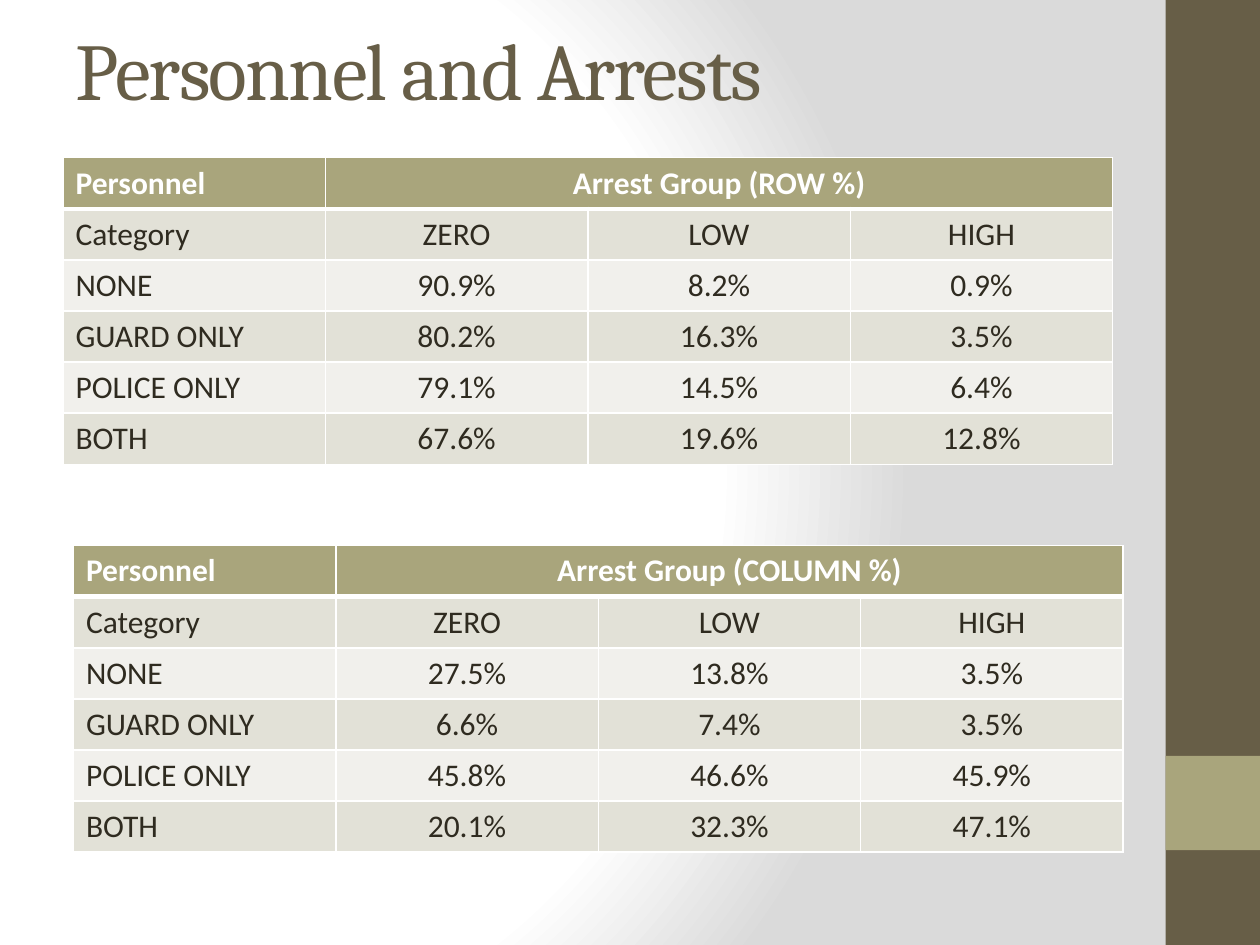
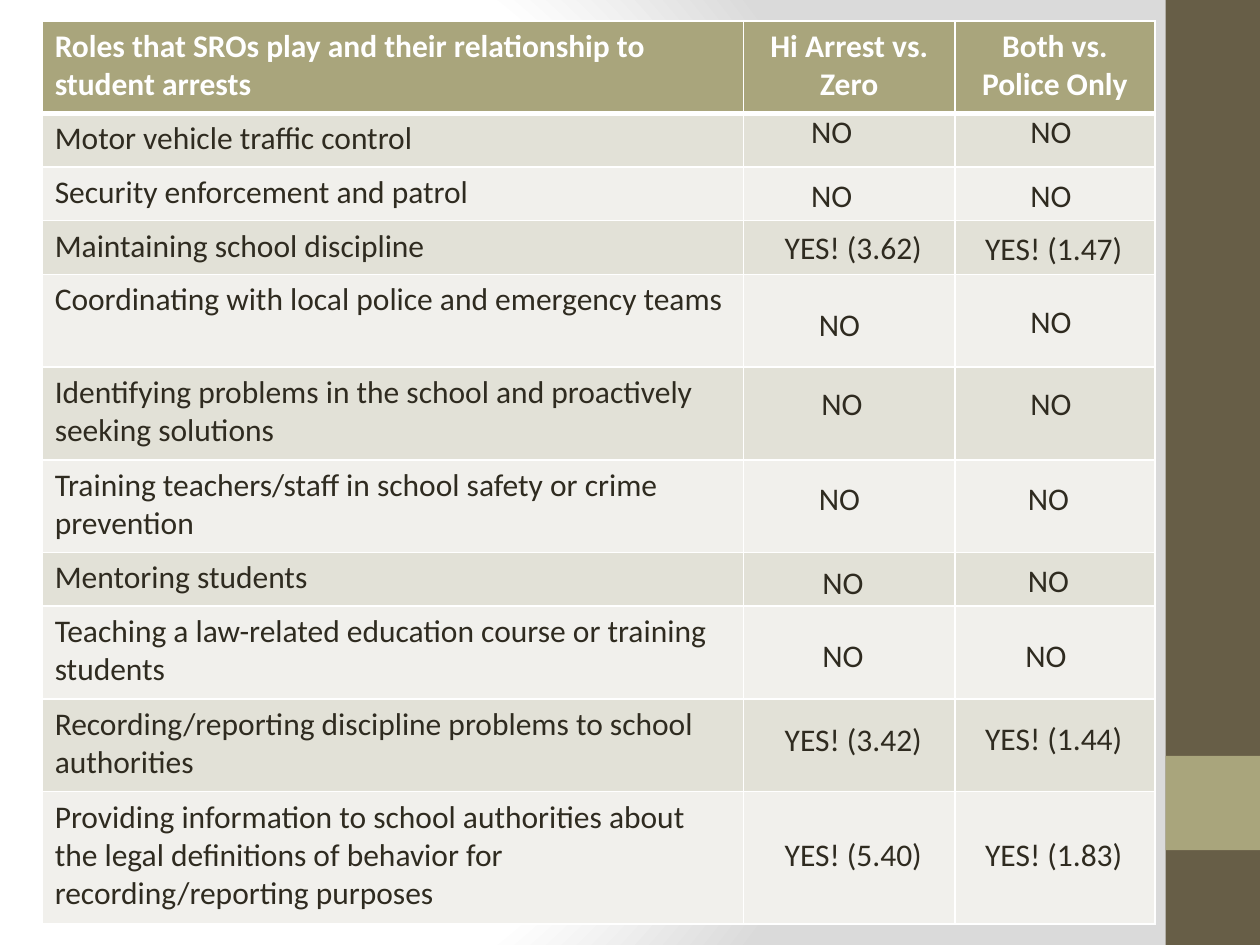
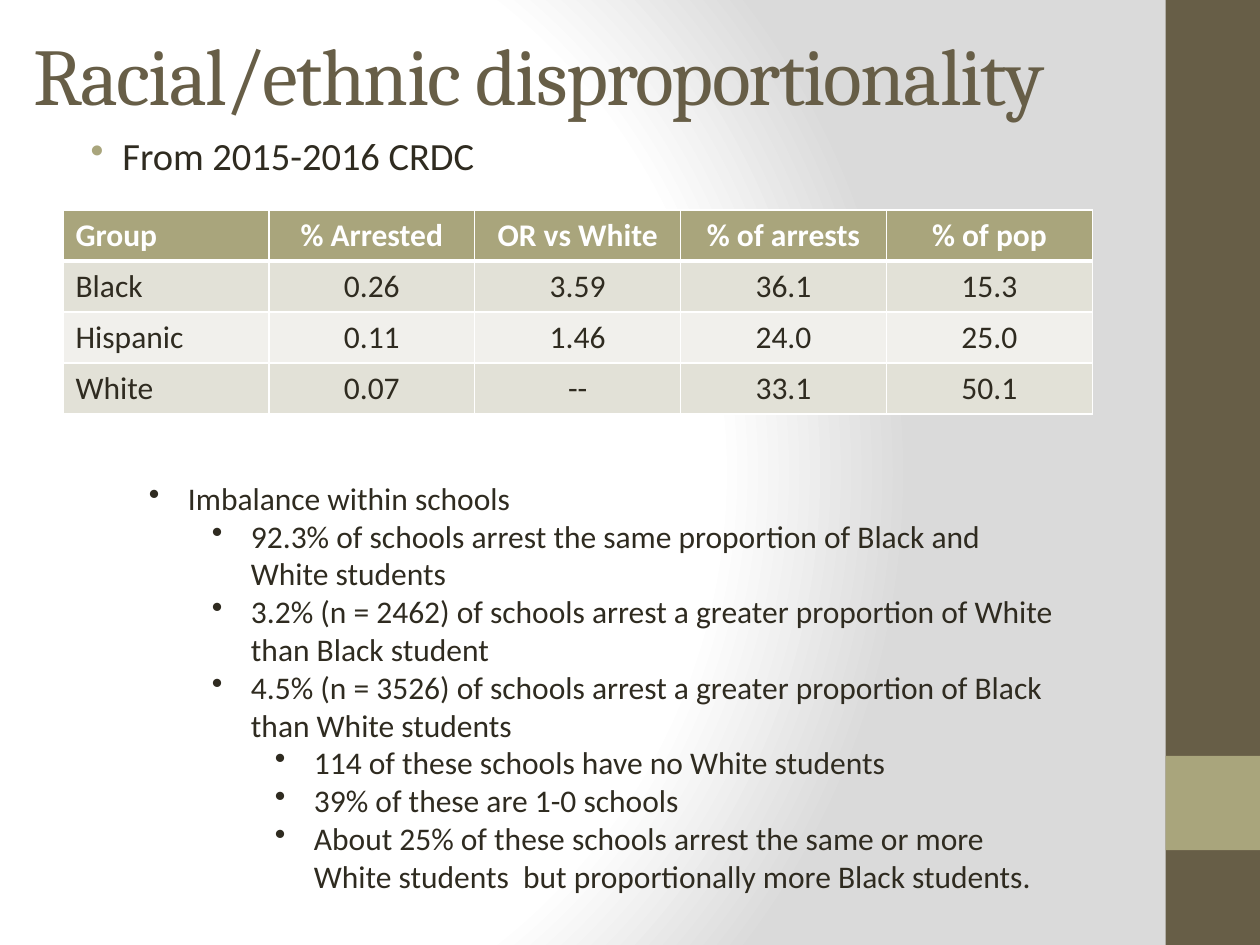
"""Build three slides on school personnel, student arrests and disproportionality."""
from itertools import zip_longest

from pptx import Presentation
from pptx.dml.color import RGBColor
from pptx.enum.shapes import MSO_SHAPE as Shape
from pptx.enum.text import MSO_ANCHOR as Anchor, MSO_AUTO_SIZE as AutoSize, PP_ALIGN as Align
from pptx.oxml import parse_xml
from pptx.oxml.ns import nsdecls, qn
from pptx.util import Cm, Pt

COLORS = {
    "brown": "675E47",
    "olive": "A9A57C",
    "ink": "2F2B20",
    "white": "FFFFFF",
    "gray": "DADADA",
    "band_dark": "E2E1D7",
    "band_light": "F1F0EC",
}
RGB = {name: RGBColor.from_string(value) for name, value in COLORS.items()}


def add_text(page, left, top, width, height, lines, size=18, bullet=None, space=0):
    """Add a text box from (level, text) lines, bulleted in the given colour."""
    box = page.shapes.add_textbox(Cm(left), Cm(top), Cm(width), Cm(height))
    frame = box.text_frame
    frame.word_wrap = True
    for number, (level, text) in enumerate(lines):
        para = frame.add_paragraph() if number else frame.paragraphs[0]
        para.text = text
        para.level = level
        if bullet:
            margin, hanging = (0.79 + 1.27 * level, 0.79) if level else (0.95, 0.64)
            properties = para._p.get_or_add_pPr()
            properties.set("marL", str(Cm(margin)))
            properties.set("indent", str(-Cm(hanging)))
            properties.append(parse_xml(
                f'<a:buClr {nsdecls("a")}><a:srgbClr val="{COLORS[bullet]}"/></a:buClr>'))
            properties.append(parse_xml(f'<a:buChar {nsdecls("a")} char="•"/>'))
            para.space_before = Pt(space)
        para.font.name, para.font.size = "Calibri", Pt(size)
        para.font.color.rgb = RGB["ink"]


def add_grid(page, left, top, widths, heights, rows):
    """Add a banded table; a short header row stretches its last cell."""
    table = page.shapes.add_table(len(rows), len(widths), Cm(left), Cm(top),
                                  Cm(sum(widths)), Cm(sum(heights))).table
    for column, width in zip(table.columns, widths):
        column.width = Cm(width)
    for row_index, (row, height, texts) in enumerate(zip(table.rows, heights, rows)):
        row.height = Cm(height)
        header = row_index == 0
        fill = "olive" if header else ("band_light", "band_dark")[row_index % 2]
        thick = {0: "lnB", 1: "lnT"}.get(row_index)
        for column_index, (cell, text) in enumerate(zip_longest(row.cells, texts, fillvalue="")):
            for side in ("lnL", "lnR", "lnT", "lnB"):
                cell._tc.get_or_add_tcPr().append(parse_xml(
                    f'<a:{side} {nsdecls("a")} w="{Pt(3 if side == thick else 1)}"><a:solidFill>'
                    f'<a:srgbClr val="{COLORS["white"]}"/></a:solidFill></a:{side}>'))
            cell.fill.solid()
            cell.fill.fore_color.rgb = RGB[fill]
            cell.text = text
            para = cell.text_frame.paragraphs[0]
            para.alignment = Align.CENTER if column_index else Align.LEFT
            para.font.name, para.font.size, para.font.bold = "Calibri", Pt(18), header
            para.font.color.rgb = RGB["white" if header else "ink"]
    if len(rows[0]) < len(widths):
        table.cell(0, len(rows[0]) - 1).merge(table.cell(0, len(widths) - 1))


deck = Presentation()
deck.slide_width, deck.slide_height = Cm(25.4), Cm(19.05)
title_only, blank = deck.slide_layouts[5], deck.slide_layouts[6]
arrests_page, roles_page, race_page = [
    deck.slides.add_slide(layout) for layout in (title_only, blank, title_only)]

master = deck.slide_master
master.background.fill.solid()
backdrop = master.element.find(".//" + qn("p:bgPr"))
stops = "".join(f'<a:gs pos="{place}"><a:srgbClr val="{COLORS[name]}"/></a:gs>'
                for place, name in ((0, "white"), (75000, "white"), (100000, "gray")))
backdrop.replace(backdrop.find(qn("a:solidFill")), parse_xml(
    f'<a:gradFill {nsdecls("a")} rotWithShape="1"><a:gsLst>{stops}</a:gsLst><a:path path="circle">'
    '<a:fillToRect l="20000" t="50000" r="100000" b="50000"/></a:path></a:gradFill>'))
for top, height, color in ((0, 19.05, "brown"), (15.24, 1.9, "olive")):
    band = arrests_page.shapes.add_shape(Shape.RECTANGLE, Cm(23.5), Cm(top), Cm(1.9), Cm(height))
    band.shadow.inherit = False
    band.fill.solid()
    band.fill.fore_color.rgb = RGB[color]
    band.line.fill.background()
    master.shapes.element.append(band.element)

for page, text, left, top, width, height in (
        (arrests_page, "Personnel and Arrests", 1.27, 0.42, 21.17, 1.9),
        (race_page, "Racial/ethnic disproportionality", 0.42, 0, 22.65, 2.96)):
    title = page.shapes.title
    title.left, title.top, title.width, title.height = Cm(left), Cm(top), Cm(width), Cm(height)
    frame = title.text_frame
    frame.text = text
    frame.auto_size = AutoSize.NONE
    frame.vertical_anchor = Anchor.MIDDLE
    para = frame.paragraphs[0]
    para.alignment = Align.LEFT
    para.font.name, para.font.size = "Cambria", Pt(46)
    para.font.color.rgb = RGB["brown"]
    para.runs[0]._r.get_or_add_rPr().set("spc", "-100")

levels = ["Category", "ZERO", "LOW", "HIGH"]
row_shares = [
    ["Personnel", "Arrest Group (ROW %)"],
    levels,
    ["NONE", "90.9%", "8.2%", "0.9%"],
    ["GUARD ONLY", "80.2%", "16.3%", "3.5%"],
    ["POLICE ONLY", "79.1%", "14.5%", "6.4%"],
    ["BOTH", "67.6%", "19.6%", "12.8%"],
]
column_shares = [
    ["Personnel", "Arrest Group (COLUMN %)"],
    levels,
    ["NONE", "27.5%", "13.8%", "3.5%"],
    ["GUARD ONLY", "6.6%", "7.4%", "3.5%"],
    ["POLICE ONLY", "45.8%", "46.6%", "45.9%"],
    ["BOTH", "20.1%", "32.3%", "47.1%"],
]
for left, top, shares in ((1.27, 3.18, row_shares), (1.48, 11, column_shares)):
    add_grid(arrests_page, left, top, [5.29] * 4, [1.03] * 6, shares)

one_line, two_lines, three_lines = 1.08, 1.87, 2.67
roles = [
    ("Motor vehicle traffic control", one_line,
     ("NO", 16.1, 2.13), ("NO", 20.52, 2.13)),
    ("Security enforcement and patrol", one_line,
     ("NO", 16.1, 3.43), ("NO", 20.52, 3.43)),
    ("Maintaining school discipline", one_line,
     ("YES! (3.62)", 15.57, 4.47), ("YES! (1.47)", 19.61, 4.5)),
    ("Coordinating with local police and emergency teams", two_lines,
     ("NO", 16.26, 6.02), ("NO", 20.52, 5.97)),
    ("Identifying problems in the school and proactively seeking solutions", two_lines,
     ("NO", 16.31, 7.62), ("NO", 20.52, 7.62)),
    ("Training teachers/staff in school safety or crime prevention", two_lines,
     ("NO", 16.26, 9.53), ("NO", 20.47, 9.53)),
    ("Mentoring students", one_line,
     ("NO", 16.33, 11.23), ("NO", 20.47, 11.18)),
    ("Teaching a law-related education course or training students", two_lines,
     ("NO", 16.33, 12.7), ("NO", 20.42, 12.7)),
    ("Recording/reporting discipline problems to school authorities", two_lines,
     ("YES! (3.42)", 15.57, 14.4), ("YES! (1.44)", 19.61, 14.38)),
    ("Providing information to school authorities about the legal definitions of behavior "
     "for recording/reporting purposes", three_lines,
     ("YES! (5.40)", 15.57, 16.71), ("YES! (1.83)", 19.61, 16.71)),
]
role_header = ["Roles that SROs play and their relationship to student arrests",
               "Hi Arrest vs. Zero", "Both vs. Police Only"]
add_grid(roles_page, 0.85, 0.42, [14.14, 4.26, 4.03],
         [two_lines] + [height for _, height, *_ in roles],
         [role_header] + [[role] for role, *_ in roles])
for _, _, *answers in roles:
    for answer, left, top in answers:
        add_text(roles_page, left, top, 1.48 if answer == "NO" else 4.01, 1.03, [(0, answer)])

add_text(race_page, 1.27, 2.54, 21.17, 15.24, [(0, "From 2015-2016 CRDC")],
         size=22, bullet="olive", space=4.4)
add_grid(race_page, 1.27, 4.23, [4.15] * 5, [1.03] * 4, [
    ["Group", "% Arrested", "OR vs White", "% of arrests", "% of pop"],
    ["Black", "0.26", "3.59", "36.1", "15.3"],
    ["Hispanic", "0.11", "1.46", "24.0", "25.0"],
    ["White", "0.07", "--", "33.1", "50.1"],
])
add_text(race_page, 1.48, 9.53, 20.11, 9.5, [
    (1, "Imbalance within schools"),
    (2, "92.3% of schools arrest the same proportion of Black and White students"),
    (2, "3.2% (n = 2462) of schools arrest a greater proportion of White than Black student"),
    (2, "4.5% (n = 3526) of schools arrest a greater proportion of Black than White students"),
    (3, "114 of these schools have no White students"),
    (3, "39% of these are 1-0 schools"),
    (3, "About 25% of these schools arrest the same or more White students  "
        "but proportionally more Black students."),
], bullet="ink")

deck.save("out.pptx")
